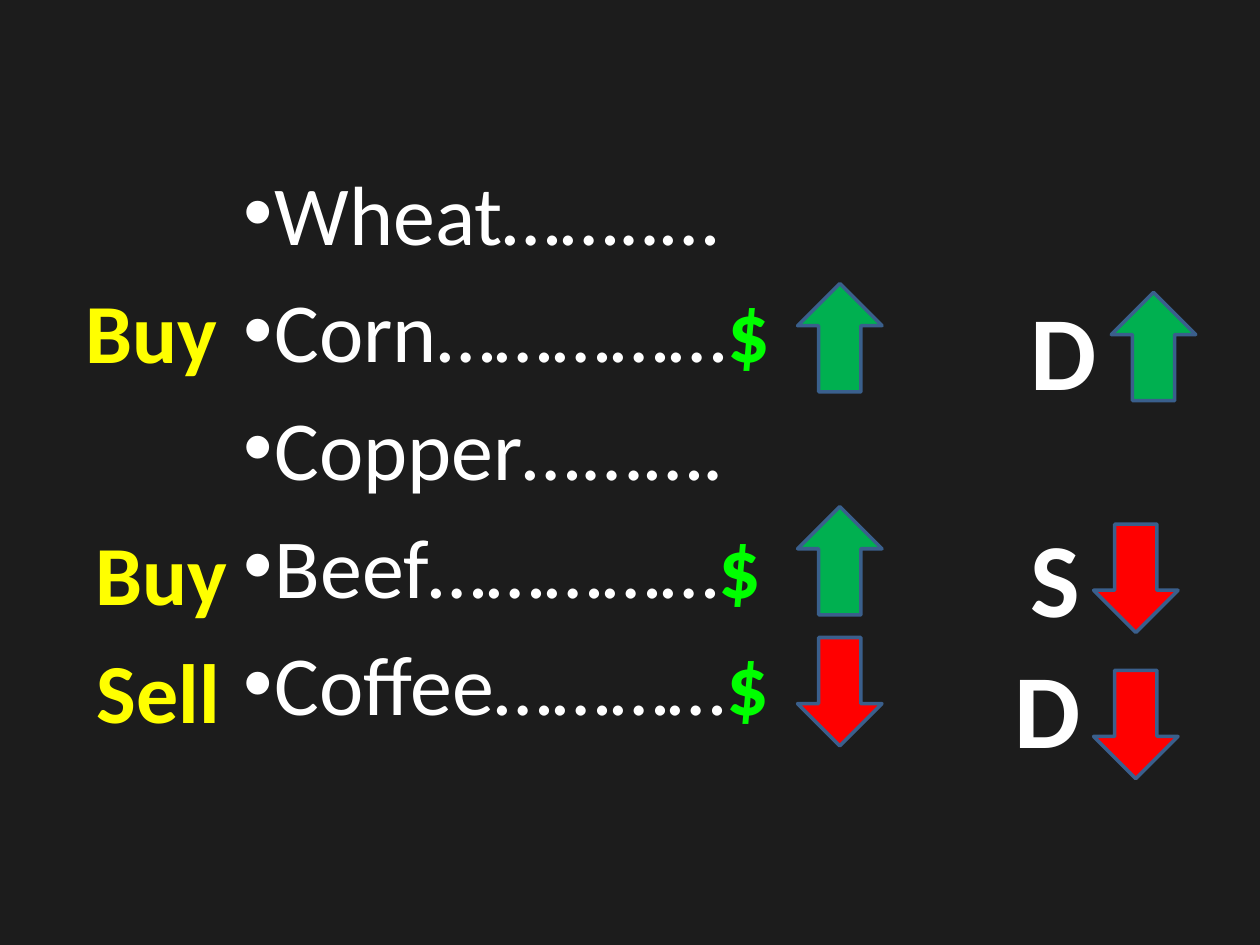
from pptx import Presentation
from pptx.dml.color import RGBColor
from pptx.enum.shapes import MSO_SHAPE
from pptx.enum.text import MSO_AUTO_SIZE
from pptx.util import Inches, Pt

WHITE, YELLOW, BRIGHT_GREEN = "FFFFFF", "FFFF00", "00FF00"
GREEN, RED, OUTLINE, BACKGROUND = "00B050", "FF0000", "3A5F8C", "1C1C1C"

# Commodity with its dotted leader, and the price sign that follows
COMMODITIES = [
    ("Wheat……..…", ""),
    ("Corn……………", "$"),
    ("Copper…...….", ""),
    ("Beef……………", "$"),
    ("Coffee…………", "$"),
]
# Text, left, top, width
ADVICE = [("Buy", 0.58, 2.17, 1.26), ("Buy", 0.66, 4.09, 1.26), ("Sell", 0.67, 5.03, 1.19)]
# Direction, top
PRICE_ARROWS = [("up", 2.25), ("up", 4.02), ("down", 5.06)]
PRICE_LEFT = 6.33
# Letter, left, top, width, direction, arrow left, arrow top
SHIFTS = [
    ("D", 8.08, 2.22, 0.73, "up", 8.82, 2.32),
    ("S", 8.08, 4.02, 0.6, "down", 8.68, 4.16),
    ("D", 7.95, 5.06, 0.73, "down", 8.68, 5.32),
]
ARROW_STYLES = {"up": (180, GREEN), "down": (0, RED)}


def color(value):
    return RGBColor.from_string(value)


def add_run(paragraph, text, size, fill, bold=False):
    run = paragraph.add_run()
    run.text = text
    formats = {"name": "Calibri", "size": Pt(size), "bold": bold}
    for attribute, value in formats.items():
        setattr(run.font, attribute, value)
    run.font.color.rgb = color(fill)


def add_label(shapes, text, left, top, width, height, size, fill):
    box = shapes.add_textbox(Inches(left), Inches(top), Inches(width), Inches(height))
    box.text_frame.word_wrap = False
    box.text_frame.auto_size = MSO_AUTO_SIZE.SHAPE_TO_FIT_TEXT
    add_run(box.text_frame.paragraphs[0], text, size, fill, bold=True)


def add_arrow(shapes, direction, left, top):
    rotation, fill = ARROW_STYLES[direction]
    arrow = shapes.add_shape(
        MSO_SHAPE.DOWN_ARROW, Inches(left), Inches(top), Inches(0.67), Inches(0.86))
    arrow.rotation = rotation
    arrow.shadow.inherit = False
    arrow.fill.solid()
    arrow.fill.fore_color.rgb = color(fill)
    arrow.line.color.rgb = color(OUTLINE)
    arrow.line.width = Pt(2)


def add_commodities(body):
    places = {"left": 0.83, "top": 1.23, "width": 8.83, "height": 5.33}
    for attribute, value in places.items():
        setattr(body, attribute, Inches(value))
    frame = body.text_frame
    frame.auto_size = MSO_AUTO_SIZE.NONE
    for index, (name, sign) in enumerate(COMMODITIES):
        paragraph = frame.add_paragraph() if index else frame.paragraphs[0]
        paragraph.level = 2
        add_run(paragraph, name, 48, WHITE)
        if sign:
            add_run(paragraph, sign, 48, BRIGHT_GREEN, bold=True)


def main():
    presentation = Presentation()
    presentation.slide_width, presentation.slide_height = Inches(10), Inches(7.5)
    slide = presentation.slides.add_slide(presentation.slide_layouts[1])
    slide.background.fill.solid()
    slide.background.fill.fore_color.rgb = color(BACKGROUND)
    title = slide.shapes.title.element
    title.getparent().remove(title)

    add_commodities(slide.placeholders[1])
    for direction, top in PRICE_ARROWS:
        add_arrow(slide.shapes, direction, PRICE_LEFT, top)
    for text, left, top, width in ADVICE:
        add_label(slide.shapes, text, left, top, width, 0.91, 48, YELLOW)
    for letter, left, top, width, direction, arrow_left, arrow_top in SHIFTS:
        group = slide.shapes.add_group_shape()
        add_label(group.shapes, letter, left, top, width, 1.11, 60, WHITE)
        add_arrow(group.shapes, direction, arrow_left, arrow_top)
    presentation.save("out.pptx")


if __name__ == "__main__":
    main()
